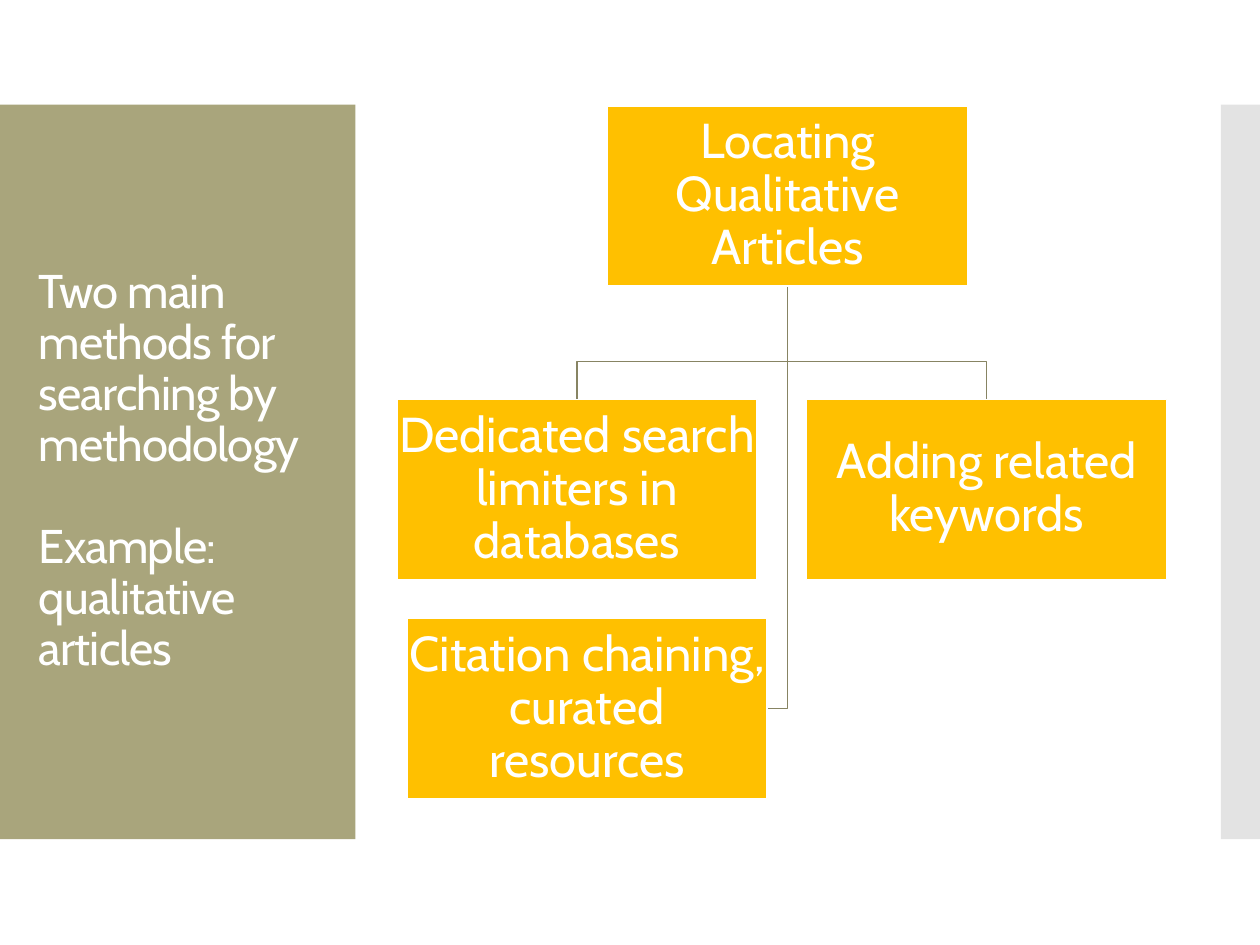
from dataclasses import dataclass

from lxml.etree import SubElement
from pptx import Presentation
from pptx.dml.color import RGBColor
from pptx.enum.shapes import MSO_SHAPE
from pptx.enum.text import MSO_ANCHOR, PP_ALIGN
from pptx.oxml.ns import qn
from pptx.slide import Slide
from pptx.util import Inches, Pt

WHITE = RGBColor(0xFF, 0xFF, 0xFF)
OLIVE = RGBColor(0xA9, 0xA5, 0x7C)
GREY = RGBColor(0xC8, 0xC8, 0xC8)
GOLD = RGBColor(0xFF, 0xC0, 0x00)
LINE = RGBColor(0x87, 0x84, 0x63)

BOX_W, BOX_H = 2.86, 1.43
ROOT = (4.82, 0.84, "Locating Qualitative Articles")
METHODS = [
    (3.15, 3.17, "Dedicated search limiters in databases"),
    (6.4, 3.17, "Adding related keywords"),
]
ASSISTANT = (3.23, 4.91, "Citation chaining, curated resources")
TITLE = ["Two main methods for searching by methodology", "Example: qualitative articles"]


@dataclass
class Deck:
    """Holds the text style and the current slide, and draws each kind of element."""

    s: Slide
    font: str = "Cabin"
    line_width: float = 0.85

    def add_text(self, sp, texts, size, align, margins=(0.1, 0.05), gap=0, spc=0):
        tf = sp.text_frame
        side, end = map(Inches, margins)
        frame = {"word_wrap": True, "vertical_anchor": MSO_ANCHOR.MIDDLE,
                 "margin_left": side, "margin_right": side,
                 "margin_top": end, "margin_bottom": end}
        for name, value in frame.items():
            setattr(tf, name, value)
        for i, text in enumerate(texts):
            p = tf.add_paragraph() if i else tf.paragraphs[0]
            layout = {"alignment": align, "line_spacing": 0.9,
                      "space_before": Pt(gap if i else 0)}
            for name, value in layout.items():
                setattr(p, name, value)
            r = p.add_run()
            r.text = text
            for name, value in {"name": self.font, "size": Pt(size)}.items():
                setattr(r.font, name, value)
            r.font.color.rgb = WHITE
            if spc:
                r._r.get_or_add_rPr().set("spc", str(spc))

    def rect(self, x, y, w, h, fill, line=None, opacity=None):
        sp = self.s.shapes.add_shape(MSO_SHAPE.RECTANGLE, *map(Inches, (x, y, w, h)))
        sp.shadow.inherit = False
        sp.fill.solid()
        sp.fill.fore_color.rgb = fill
        if opacity:
            clr = sp._element.spPr.find(".//" + qn("a:srgbClr"))
            SubElement(clr, qn("a:alpha"), val=str(opacity * 1000))
        if line is None:
            sp.line.fill.background()
        else:
            sp.line.color.rgb = line
            sp.line.width = Pt(self.line_width)
        return sp

    def title(self, x, y, w, h, texts):
        sp = self.s.shapes.add_textbox(*map(Inches, (x, y, w, h)))
        self.add_text(sp, texts, 27, PP_ALIGN.LEFT, gap=29, spc=-50)

    def box(self, x, y, text):
        sp = self.rect(x, y, BOX_W, BOX_H, GOLD, WHITE)
        self.add_text(sp, [text], 28, PP_ALIGN.CENTER, margins=(0.02, 0.02))

    def branch(self, *points):
        start, *rest = [tuple(map(Inches, point)) for point in points]
        fb = self.s.shapes.build_freeform(*start)
        fb.add_line_segments(rest, close=False)
        sp = fb.convert_to_shape()
        sp.shadow.inherit = False
        sp.fill.background()
        sp.line.color.rgb = LINE
        sp.line.width = Pt(self.line_width)


def main():
    prs = Presentation()
    prs.slide_width, prs.slide_height = Inches(10), Inches(7.5)
    deck = Deck(prs.slides.add_slide(prs.slide_layouts[6]))

    deck.rect(0, 0.83, 2.82, 5.83, OLIVE)
    deck.rect(9.69, 0.83, 0.31, 5.83, GREY, opacity=50)
    deck.title(0.21, 1.23, 2.42, 5.03, TITLE)

    trunk_x, trunk_y = ROOT[0] + BOX_W / 2, ROOT[1] + BOX_H
    elbow_y = ASSISTANT[1] + BOX_H / 2
    deck.branch((trunk_x, trunk_y), (trunk_x, elbow_y), (ASSISTANT[0] + BOX_W, elbow_y))
    for x, y, _ in reversed(METHODS):
        mid = x + BOX_W / 2
        deck.branch((trunk_x, trunk_y), (trunk_x, y - 0.3), (mid, y - 0.3), (mid, y))

    for x, y, text in [ROOT, *METHODS, ASSISTANT]:
        deck.box(x, y, text)

    prs.save("out.pptx")


if __name__ == "__main__":
    main()
